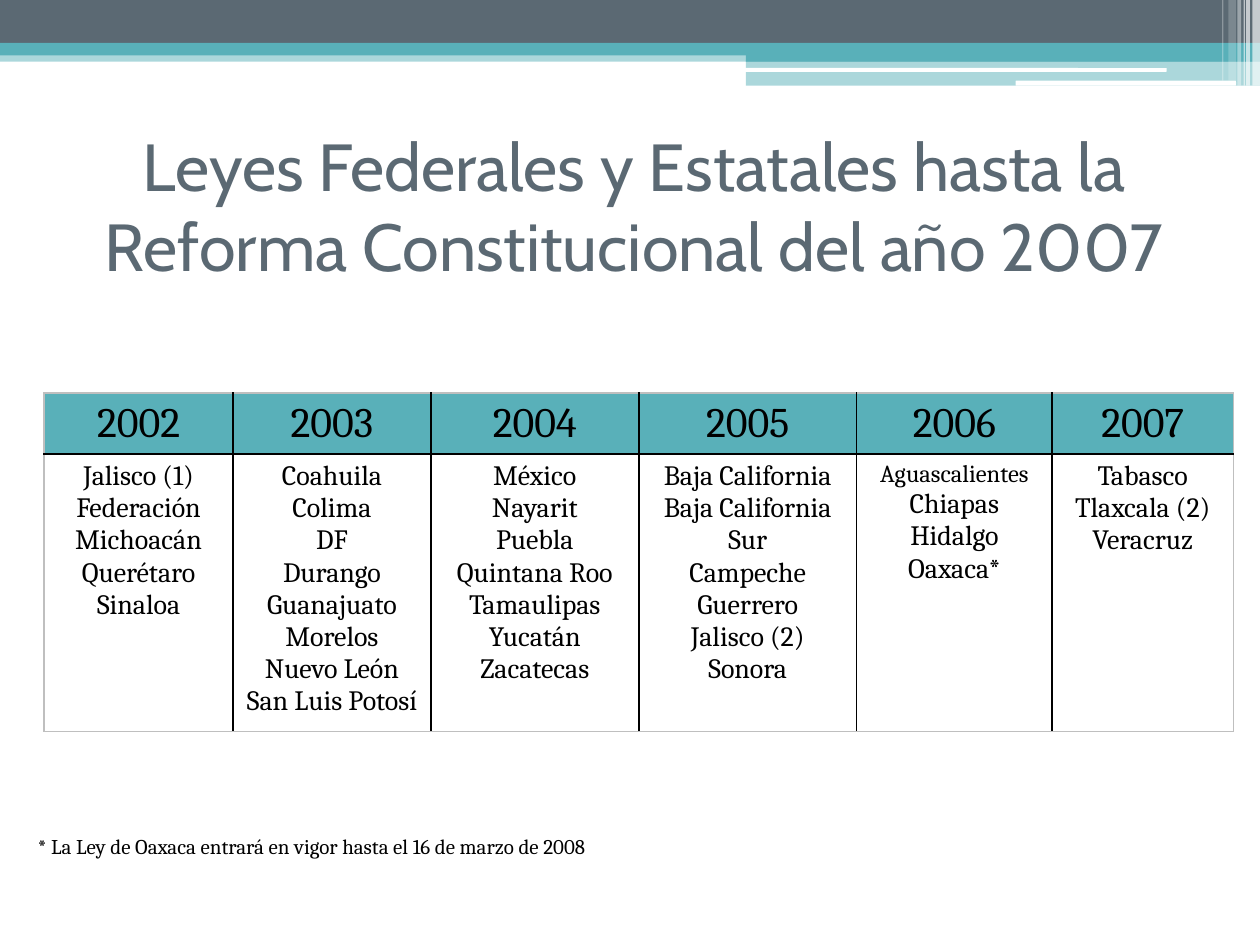
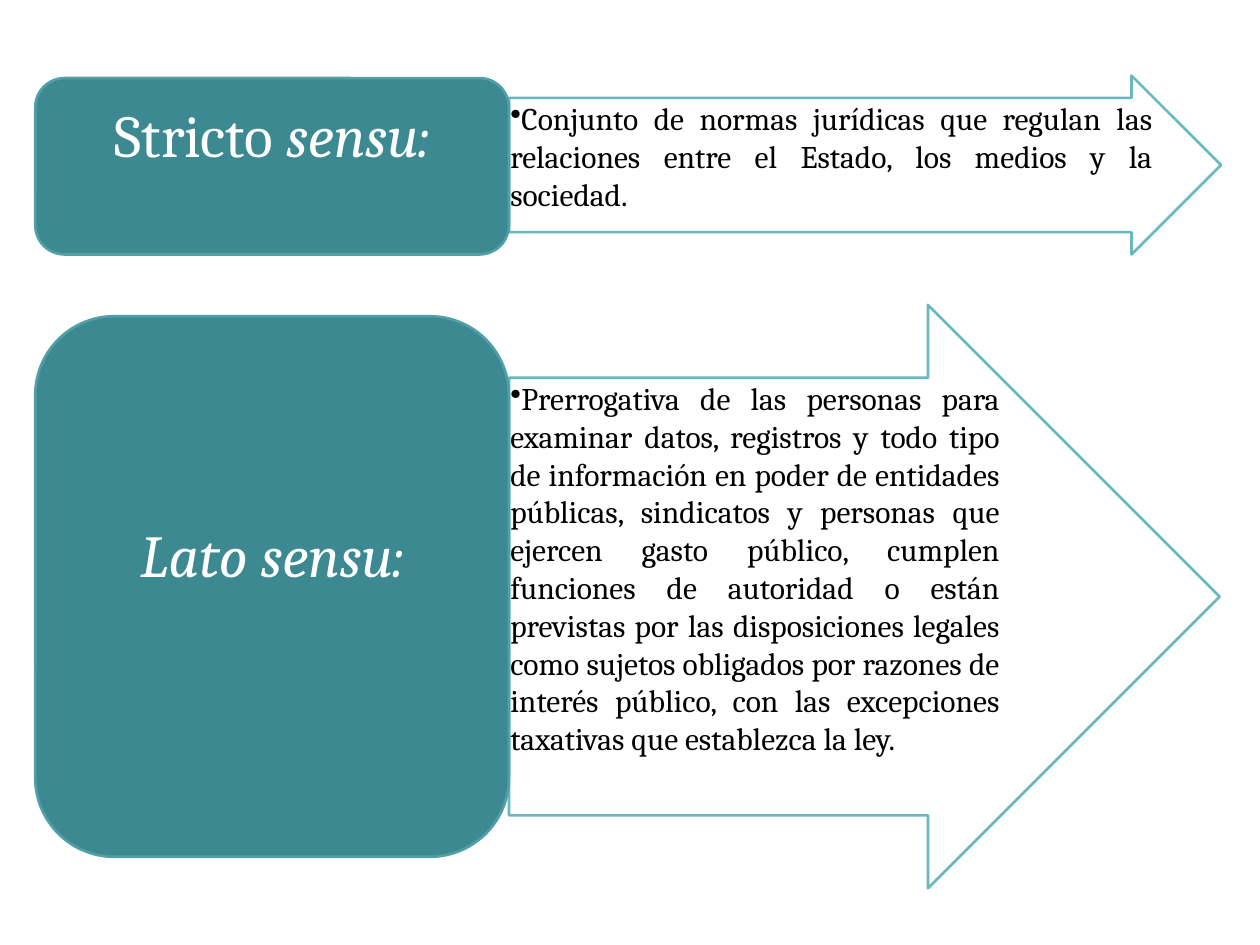
from dataclasses import dataclass

from lxml import etree
from pptx import Presentation
from pptx import util as u
from pptx.dml.color import RGBColor
from pptx.enum import shapes, text
from pptx.oxml import ns

PX = 9144


@dataclass(frozen=True)
class Theme:
    teal: str = "59B0B9"
    slate: str = "5B6973"
    deep_teal: str = "3D8991"
    edge_teal: str = "51A0A8"
    white: str = "FFFFFF"
    black: str = "000000"
    grey: str = "BFBFBF"
    title_font: str = "Cabin"
    body_font: str = "Cambria"
    title: int = 38
    label: int = 34
    year: int = 24
    definition: int = 18
    state: int = 16
    long_state: int = 14
    note: int = 12


theme = Theme()


def draw(slide, kind, box, fill, opacity=100, line=None):
    shape = slide.shapes.add_shape(kind, *(value * PX for value in box))
    shape.shadow.inherit = False
    shape.fill.solid()
    shape.fill.fore_color.rgb = RGBColor.from_string(fill)
    if line:
        shape.line.color.rgb = RGBColor.from_string(line)
        shape.line.width = u.Pt(1.5)
    else:
        shape.line.fill.background()
    if opacity < 100:
        for color in shape.element.spPr.iter(ns.qn("a:srgbClr")):
            etree.SubElement(color, ns.qn("a:alpha"), val=str(opacity * 1000))
    return shape


def style(paragraph, size, color=theme.black, align=text.PP_ALIGN.CENTER, font=theme.body_font):
    paragraph.alignment = align
    paragraph.font.size = u.Pt(size)
    paragraph.font.name = font
    paragraph.font.color.rgb = RGBColor.from_string(color)


presentation = Presentation()
presentation.slide_width = 1000 * PX
presentation.slide_height = 750 * PX
blank = presentation.slide_layouts[6]
rectangle = shapes.MSO_SHAPE.RECTANGLE
rounded = shapes.MSO_SHAPE.ROUNDED_RECTANGLE

slide = presentation.slides.add_slide(blank)
for kind, box, fill, opacity in [
    (rectangle, (0, 40, 1000, 9), theme.teal, 50),
    (rectangle, (0, 0, 1000, 34), theme.slate, 100),
    (rectangle, (0, 34, 1000, 10), theme.teal, 100),
    (rectangle, (592, 39, 408, 10), theme.teal, 100),
    (rectangle, (592, 48, 408, 20), theme.teal, 50),
    (rounded, (591, 54, 335, 3), theme.white, 100),
    (rounded, (806, 64, 175, 4), theme.white, 100),
]:
    draw(slide, kind, box, fill, opacity)

for left, width, height, opacity in [
    (994, 6, 68, 65), (989, 3, 68, 65), (987, 1, 68, 60),
    (982, 3, 68, 40), (975, 6, 64, 20), (970, 1, 64, 30),
]:
    draw(slide, rectangle, (left, 0, width, height), theme.white, opacity)

states_by_year = {
    "2002": ["Jalisco (1)", "Federación", "Michoacán", "Querétaro", "Sinaloa"],
    "2003": ["Coahuila", "Colima", "DF", "Durango", "Guanajuato", "Morelos",
             "Nuevo León", "San Luis Potosí"],
    "2004": ["México", "Nayarit", "Puebla", "Quintana Roo", "Tamaulipas",
             "Yucatán", "Zacatecas"],
    "2005": ["Baja California", "Baja California", "Sur", "Campeche", "Guerrero",
             "Jalisco (2)", "Sonora"],
    "2006": ["Aguascalientes", "Chiapas", "Hidalgo", "Oaxaca*"],
    "2007": ["Tabasco", "Tlaxcala (2)", "Veracruz"],
}
column_widths = [150, 157, 165, 173, 155, 144]
table = slide.shapes.add_table(
    2, len(column_widths), 35 * PX, 312 * PX, sum(column_widths) * PX, 268 * PX).table
table.rows[0].height = 48 * PX
table.rows[1].height = 220 * PX
for column, (year, states) in enumerate(states_by_year.items()):
    table.columns[column].width = column_widths[column] * PX
    for row, lines in enumerate([[year], states]):
        cell = table.cell(row, column)
        cell.text = "\n".join(lines)
        for paragraph in cell.text_frame.paragraphs:
            size = theme.long_state if paragraph.text == "Aguascalientes" else theme.state
            style(paragraph, size if row else theme.year)
            paragraph.font.bold = False
        outer_edges = {"lnL": column == 0, "lnR": column == len(column_widths) - 1,
                       "lnT": row == 0, "lnB": row == 1}
        properties = cell._tc.get_or_add_tcPr()
        for edge, is_outer in outer_edges.items():
            border = etree.SubElement(properties, ns.qn(f"a:{edge}"), w=str(u.Pt(1)))
            solid = etree.SubElement(border, ns.qn("a:solidFill"))
            etree.SubElement(solid, ns.qn("a:srgbClr"),
                             val=theme.grey if is_outer else theme.black)
        if row:
            cell.fill.background()
        else:
            cell.fill.solid()
            cell.fill.fore_color.rgb = RGBColor.from_string(theme.teal)

note = slide.shapes.add_textbox(20 * PX, 657 * PX, 559 * PX, 30 * PX).text_frame
note.word_wrap = True
note.text = "* La Ley de Oaxaca entrará en vigor hasta el 16 de marzo de 2008"
style(note.paragraphs[0], theme.note, align=text.PP_ALIGN.LEFT)

title = slide.shapes.add_textbox(50 * PX, 76 * PX, 907 * PX, 173 * PX).text_frame
title.word_wrap = True
title.vertical_anchor = text.MSO_ANCHOR.MIDDLE
title.text = "Leyes Federales y Estatales hasta la Reforma Constitucional del año 2007"
style(title.paragraphs[0], theme.title, theme.slate, font=theme.title_font)

slide = presentation.slides.add_slide(blank)
for upright, italic, label_box, arrow_box, definition in [
    ("Stricto ", "sensu:", (28, 62, 376, 140), (404, 60, 565, 142),
     "Conjunto de normas jurídicas que regulan las relaciones entre el Estado, "
     "los medios y la sociedad."),
    ("", "Lato sensu:", (28, 251, 376, 429), (404, 242, 564, 463),
     "Prerrogativa de las personas para examinar datos, registros y todo tipo de "
     "información en poder de entidades públicas, sindicatos y personas que ejercen "
     "gasto público, cumplen funciones de autoridad o están previstas por las "
     "disposiciones legales como sujetos obligados por razones de interés público, "
     "con las excepciones taxativas que establezca la ley."),
]:
    arrow = draw(slide, shapes.MSO_SHAPE.RIGHT_ARROW, arrow_box, theme.white, 90, theme.teal)
    arrow.adjustments[0] = 0.75
    frame = arrow.text_frame
    frame.word_wrap = True
    frame.vertical_anchor = text.MSO_ANCHOR.TOP
    frame.margin_left = frame.margin_right = frame.margin_top = frame.margin_bottom = PX
    frame.text = definition
    paragraph = frame.paragraphs[0]
    style(paragraph, theme.definition, align=text.PP_ALIGN.JUSTIFY)
    bullet = etree.Element(ns.qn("a:buChar"), char="•")
    paragraph._p.get_or_add_pPr().insert(0, bullet)

    label = draw(slide, rounded, label_box, theme.deep_teal, line=theme.edge_teal)
    frame = label.text_frame
    frame.word_wrap = True
    frame.vertical_anchor = text.MSO_ANCHOR.MIDDLE
    frame.margin_top = 0
    frame.margin_bottom = 52 * PX
    paragraph = frame.paragraphs[0]
    style(paragraph, theme.label, theme.white)
    if upright:
        paragraph.add_run().text = upright
    run = paragraph.add_run()
    run.text = italic
    run.font.italic = True

presentation.save("out.pptx")
